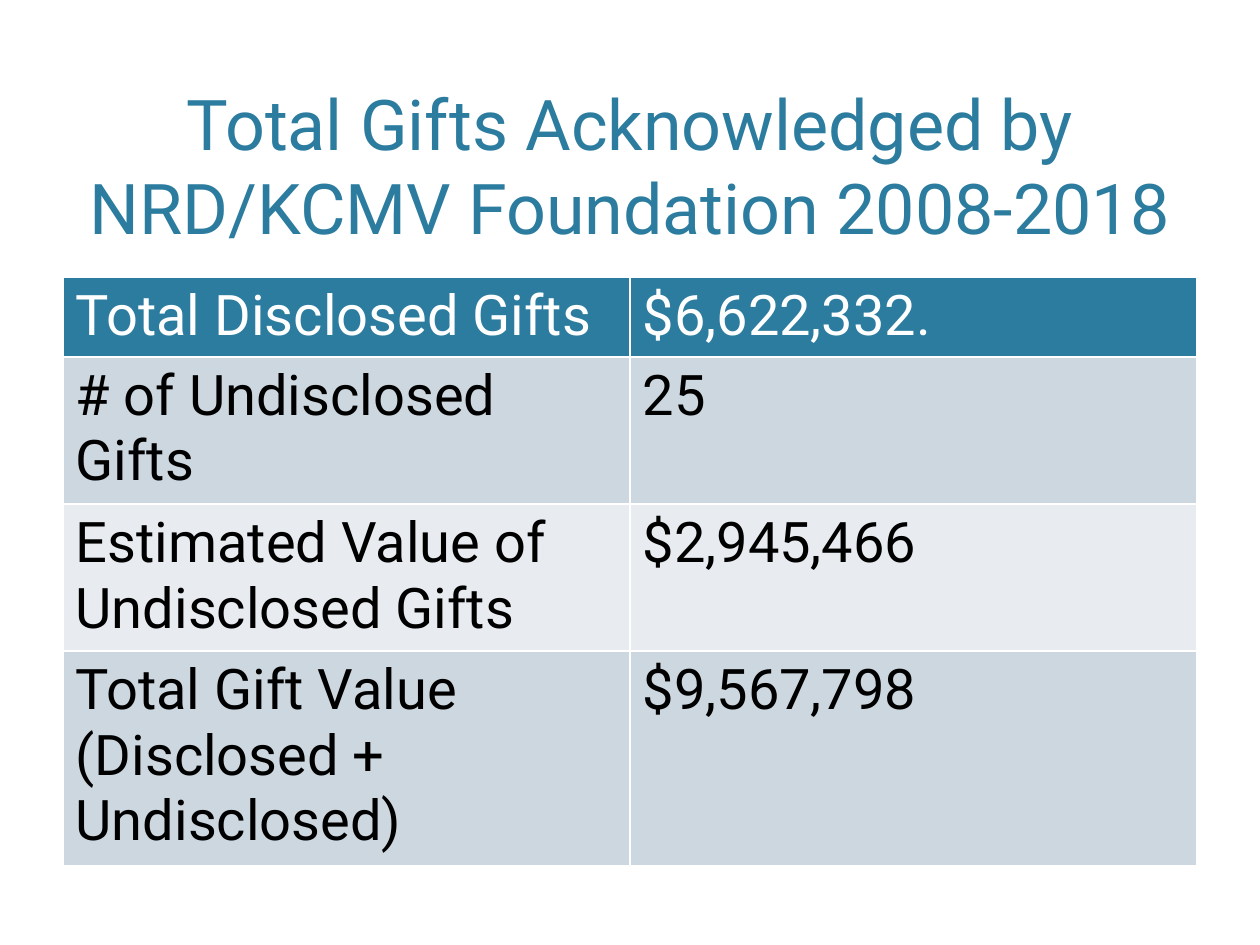
"""Build the slide with the totals of acknowledged gifts."""
import lxml.etree
import pptx
import pptx.dml.color
import pptx.enum.text
import pptx.oxml.ns
import pptx.util

PIXEL = 914400 / 126
BLUE = pptx.dml.color.RGBColor(0x2C, 0x7C, 0x9F)
DARK_BAND = pptx.dml.color.RGBColor(0xCD, 0xD7, 0xDF)
LIGHT_BAND = pptx.dml.color.RGBColor(0xE8, 0xEC, 0xF0)
WHITE = pptx.dml.color.RGBColor(0xFF, 0xFF, 0xFF)
BLACK = pptx.dml.color.RGBColor(0, 0, 0)

GIFT_ROWS = [
    ("Total Disclosed Gifts", "$6,622,332."),
    ("# of Undisclosed Gifts", "25"),
    ("Estimated Value of Undisclosed Gifts", "$2,945,466"),
    ("Total Gift Value \v(Disclosed + Undisclosed)", "$9,567,798"),
]
ROW_HEIGHTS = [78, 144, 144, 209]


def px(length):
    return pptx.util.Emu(round(length * PIXEL))


def write_text(text_frame, text, *, font, size, color, alignment=None):
    paragraph = text_frame.paragraphs[0]
    paragraph.text = text
    paragraph.alignment = alignment
    for run in paragraph.runs:
        run.font.name = font
        run.font.size = pptx.util.Pt(size)
        run.font.color.rgb = color


class SlideBuilder:
    def __init__(self, slide, font):
        self.slide = slide
        self.font = font

    def title(self, text, left, top, width, height):
        shape = self.slide.shapes.add_textbox(px(left), px(top), px(width), px(height))
        text_frame = shape.text_frame
        text_frame.word_wrap = True
        text_frame.vertical_anchor = pptx.enum.text.MSO_ANCHOR.BOTTOM
        write_text(text_frame, text, font=self.font, size=40, color=BLUE,
                   alignment=pptx.enum.text.PP_ALIGN.CENTER)

    def borders(self, cell, color, width):
        properties = cell._tc.get_or_add_tcPr()
        for side in ("lnL", "lnR", "lnT", "lnB"):
            line = lxml.etree.SubElement(properties, pptx.oxml.ns.qn(f"a:{side}"),
                                         w=str(pptx.util.Pt(width)))
            fill = lxml.etree.SubElement(line, pptx.oxml.ns.qn("a:solidFill"))
            lxml.etree.SubElement(fill, pptx.oxml.ns.qn("a:srgbClr"), val=str(color))

    def table(self, rows, heights, left, top, width):
        shape = self.slide.shapes.add_table(len(rows), len(rows[0]), px(left), px(top),
                                            px(width), px(sum(heights)))
        table = shape.table
        for row_index, (texts, height) in enumerate(zip(rows, heights)):
            table.rows[row_index].height = px(height)
            band = DARK_BAND if row_index % 2 else LIGHT_BAND
            fill, color = (band, BLACK) if row_index else (BLUE, WHITE)
            for column_index, text in enumerate(texts):
                cell = table.cell(row_index, column_index)
                self.borders(cell, WHITE, 1)
                cell.fill.solid()
                cell.fill.fore_color.rgb = fill
                write_text(cell.text_frame, text, font=self.font, size=32, color=color)


def main():
    presentation = pptx.Presentation()
    presentation.slide_width = px(1260)
    presentation.slide_height = px(945)
    slide = presentation.slides.add_slide(presentation.slide_layouts[6])
    builder = SlideBuilder(slide, "Roboto")
    builder.title("Total Gifts Acknowledged by NRD/KCMV Foundation 2008-2018", 76, 71, 1108, 184)
    builder.table(GIFT_ROWS, ROW_HEIGHTS, 63, 277, 1134)
    presentation.save("out.pptx")


if __name__ == "__main__":
    main()
